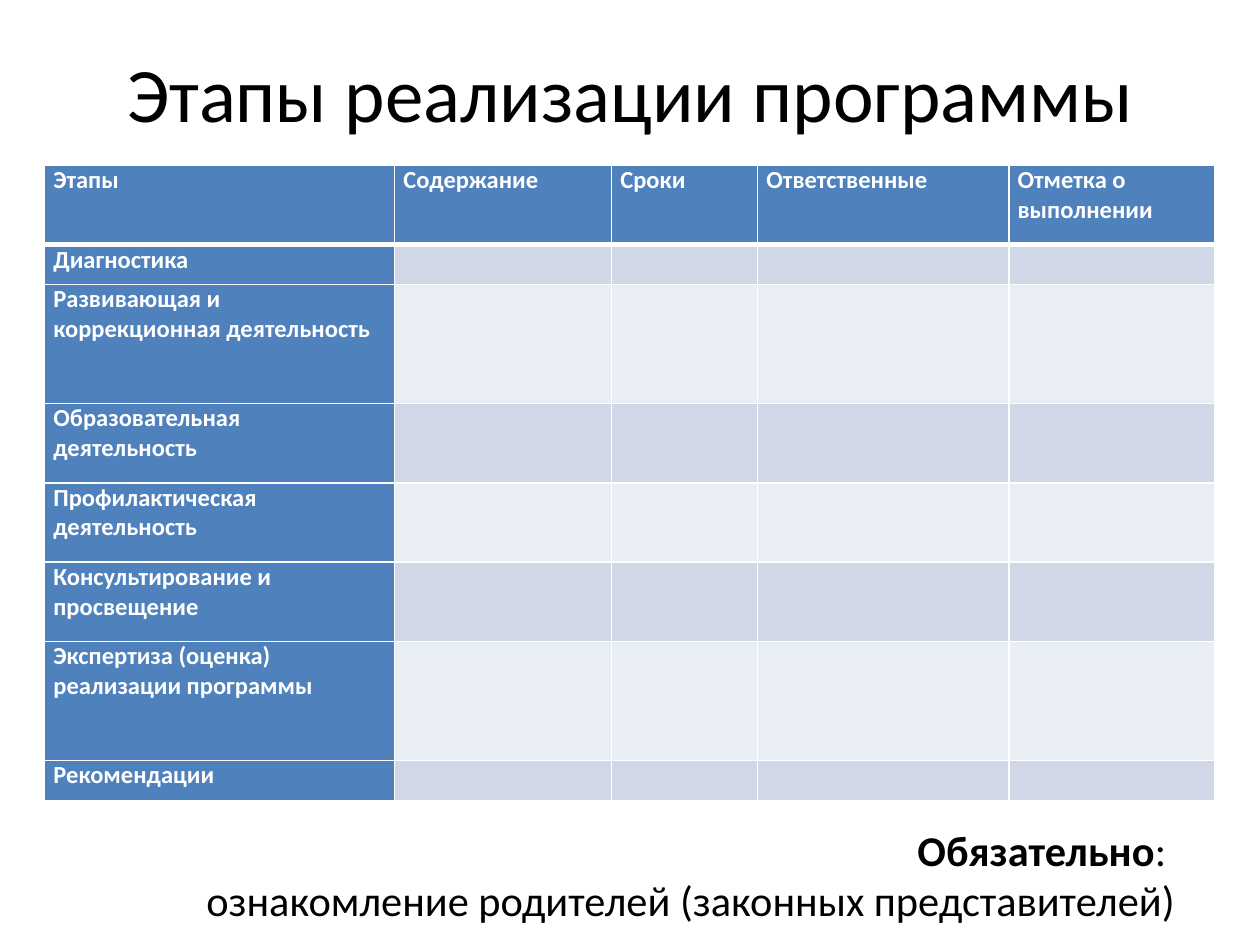
from lxml import etree
from pptx import Presentation
from pptx import util as u
from pptx.dml.color import RGBColor
from pptx.enum import text
from pptx.oxml.ns import qn

TITLE = "Этапы реализации программы"
HEADERS = [("Этапы", 200), ("Содержание", 124), ("Сроки", 83.5),
           ("Ответственные", 143.5), ("Отметка о выполнении", 117.5)]
STAGES = [("Диагностика", 1),
          ("Развивающая и коррекционная деятельность", 3),
          ("Образовательная деятельность", 2),
          ("Профилактическая деятельность", 2),
          ("Консультирование и просвещение", 2),
          ("Экспертиза (оценка) реализации программы", 3),
          ("Рекомендации", 1)]
NOTE = [[("Обязательно", True), (": ", False)],
        [("ознакомление родителей (законных представителей)", False)]]
HEADER_UNITS = 2
ROW_UNIT = 22.68
ACCENT, BANDS = "4F81BD", ("D0D8E8", "E9EDF4")


def format_font(font, size, color, bold=False):
    font.name, font.size, font.bold = "Calibri", u.Pt(size), bold
    font.color.rgb = RGBColor.from_string(color)


def add_border(cell, side, width):
    line = etree.SubElement(cell._tc.get_or_add_tcPr(), qn(f"a:ln{side}"), w=str(u.Pt(width)))
    fill = etree.SubElement(line, qn("a:solidFill"))
    etree.SubElement(fill, qn("a:srgbClr"), val="FFFFFF")


def style_cell(cell, row, column):
    cell.margin_left = cell.margin_right = u.Pt(5)
    cell.margin_top = cell.margin_bottom = 0
    for side in "LRTB":
        under_header = (row, side) in ((0, "B"), (1, "T"))
        add_border(cell, side, 3 if under_header else 1)
    cell.fill.solid()
    color = ACCENT if row == 0 or column == 0 else BANDS[(row - 1) % 2]
    cell.fill.fore_color.rgb = RGBColor.from_string(color)


def add_stages(slide):
    rows = [([name for name, _ in HEADERS], HEADER_UNITS)]
    rows += [([name], units) for name, units in STAGES]
    width = sum(w for _, w in HEADERS)
    height = ROW_UNIT * sum(units for _, units in rows)
    stages = slide.shapes.add_table(len(rows), len(HEADERS), u.Pt(25.5), u.Pt(94.5),
                                    u.Pt(width), u.Pt(height)).table
    for column, (_, column_width) in zip(stages.columns, HEADERS):
        column.width = u.Pt(column_width)
    for r, (labels, units) in enumerate(rows):
        stages.rows[r].height = u.Pt(ROW_UNIT * units)
        for c in range(len(HEADERS)):
            style_cell(stages.cell(r, c), r, c)
        for c, label in enumerate(labels):
            paragraph = stages.cell(r, c).text_frame.paragraphs[0]
            paragraph.text = label
            format_font(paragraph.runs[0].font, 14, "FFFFFF", True)


def add_note(slide):
    frame = slide.shapes.add_textbox(u.Pt(31), u.Pt(468.5), u.Pt(648), u.Pt(62.5)).text_frame
    frame.word_wrap = True
    frame.vertical_anchor = text.MSO_ANCHOR.MIDDLE
    for i, parts in enumerate(NOTE):
        paragraph = frame.add_paragraph() if i else frame.paragraphs[0]
        paragraph.alignment = text.PP_ALIGN.RIGHT
        for words, bold in parts:
            run = paragraph.add_run()
            run.text = words
            format_font(run.font, 24.2, "000000", bold)


def main():
    deck = Presentation()
    deck.slide_width, deck.slide_height = u.Pt(720), u.Pt(540)
    slide = deck.slides.add_slide(deck.slide_layouts[5])
    title = slide.shapes.title
    title.left, title.top, title.width, title.height = map(u.Pt, (36.5, 21, 648, 62.5))
    title.text_frame.text = TITLE
    title.text_frame.vertical_anchor = text.MSO_ANCHOR.MIDDLE
    heading = title.text_frame.paragraphs[0]
    heading.alignment = text.PP_ALIGN.CENTER
    format_font(heading.runs[0].font, 44, "000000")
    add_stages(slide)
    add_note(slide)
    deck.save("out.pptx")


if __name__ == "__main__":
    main()
